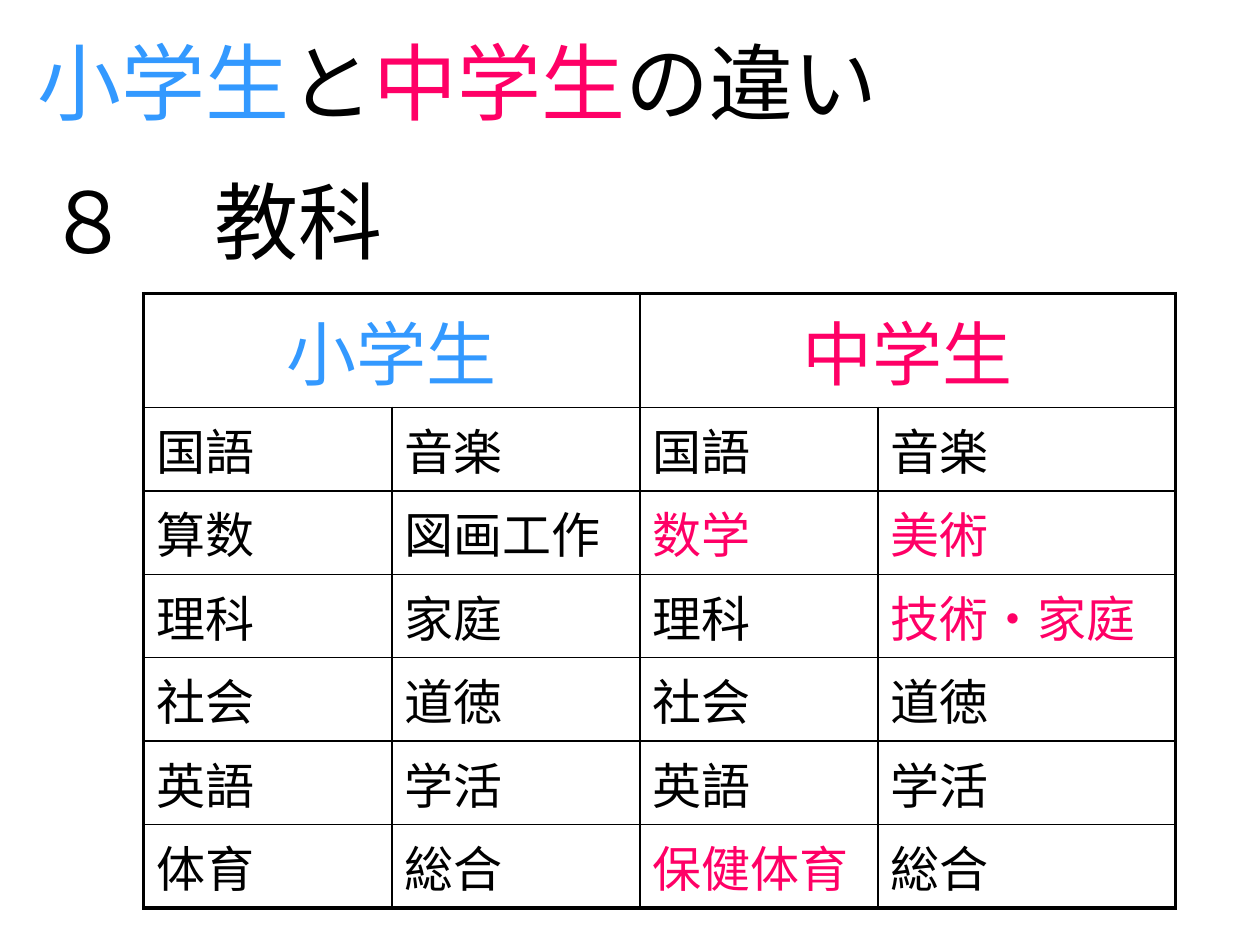
from lxml import etree
from pptx import Presentation
from pptx.dml.color import RGBColor
from pptx.enum.text import MSO_ANCHOR, MSO_AUTO_SIZE, PP_ALIGN
from pptx.oxml.ns import qn
from pptx.util import Inches, Pt

MIDDLE = MSO_ANCHOR.MIDDLE
NO_AUTOFIT = MSO_AUTO_SIZE.NONE
LEFT, CENTER = PP_ALIGN.LEFT, PP_ALIGN.CENTER

BLACK = RGBColor(0x00, 0x00, 0x00)
BLUE = RGBColor(0x33, 0x99, 0xFF)
PINK = RGBColor(0xFF, 0x00, 0x66)

FONT = "Arial"
HEADING_SIZE, HEADER_SIZE, SUBJECT_SIZE = 48, 40, 28
THIN, THICK = 1, 2.25

COLUMN_WIDTHS = [1.97, 1.97, 1.89, 2.36]
ROW_HEIGHTS = [0.79, 0.55, 0.55, 0.6, 0.55, 0.55, 0.55]
SCHOOLS = [("小学生", BLUE), ("中学生", PINK)]
SUBJECTS = [
    ["国語", "音楽", "国語", "音楽"],
    ["算数", "図画工作", "数学", "美術"],
    ["理科", "家庭", "理科", "技術・家庭"],
    ["社会", "道徳", "社会", "道徳"],
    ["英語", "学活", "英語", "学活"],
    ["体育", "総合　", "保健体育", "総合　"],
]


def add_run(paragraph, text, size, color):
    """Append one formatted run to a paragraph."""
    run = paragraph.add_run()
    run.text = text
    run.font.name = FONT
    run.font.size = Pt(size)
    run.font.color.rgb = color


def fill_heading(shape, parts):
    """Write coloured parts as one left-aligned heading line."""
    text_frame = shape.text_frame
    text_frame.word_wrap = True
    text_frame.auto_size = NO_AUTOFIT
    text_frame.vertical_anchor = MIDDLE
    paragraph = text_frame.paragraphs[0]
    paragraph.alignment = LEFT
    for text, color in parts:
        add_run(paragraph, text, HEADING_SIZE, color)


def add_border(cell, side, width):
    """Draw one black edge of a cell."""
    properties = cell._tc.get_or_add_tcPr()
    line = etree.SubElement(properties, qn(f"a:ln{side}"), w=str(Pt(width)))
    fill = etree.SubElement(line, qn("a:solidFill"))
    etree.SubElement(fill, qn("a:srgbClr"), val=str(BLACK))


def frame_cell(table, row, column):
    """Give a cell thick edges on the table's outline and thin ones inside."""
    cell = table.cell(row, column)
    outer = {
        "L": column == 0,
        "R": column + cell.span_width == len(COLUMN_WIDTHS),
        "T": row == 0,
        "B": row == len(ROW_HEIGHTS) - 1,
    }
    for side, is_outer in outer.items():
        add_border(cell, side, THICK if is_outer else THIN)
    cell.fill.background()


def fill_cell(cell, text, size, color, alignment=LEFT):
    """Write a cell's text with a fifth of a line above it."""
    paragraph = cell.text_frame.paragraphs[0]
    paragraph.alignment = alignment
    properties = paragraph._p.get_or_add_pPr()
    spacing = etree.SubElement(properties, qn("a:spcBef"))
    etree.SubElement(spacing, qn("a:spcPct"), val="20000")
    add_run(paragraph, text, size, color)


def add_subject_table(slide):
    """Add the table that compares the subjects of both schools."""
    frame = slide.shapes.add_table(
        len(ROW_HEIGHTS), len(COLUMN_WIDTHS), Inches(1.14), Inches(2.33),
        Inches(sum(COLUMN_WIDTHS)), Inches(sum(ROW_HEIGHTS)))
    table = frame.table
    table.first_row = table.horz_banding = False
    for column, width in zip(table.columns, COLUMN_WIDTHS):
        column.width = Inches(width)
    for row, height in zip(table.rows, ROW_HEIGHTS):
        row.height = Inches(height)
    for index, (school, color) in enumerate(SCHOOLS):
        header = table.cell(0, 2 * index)
        header.merge(table.cell(0, 2 * index + 1))
        fill_cell(header, school, HEADER_SIZE, color, CENTER)
    for row, subjects in enumerate(SUBJECTS, start=1):
        for column, subject in enumerate(subjects):
            changed = column >= 2 and subject != subjects[column - 2]
            fill_cell(table.cell(row, column), subject, SUBJECT_SIZE,
                      PINK if changed else BLACK)
    for row in range(len(ROW_HEIGHTS)):
        for column in range(len(COLUMN_WIDTHS)):
            frame_cell(table, row, column)


def main():
    """Build the slide and save it."""
    presentation = Presentation()
    presentation.slide_width = Inches(10)
    presentation.slide_height = Inches(7.5)
    slide = presentation.slides.add_slide(presentation.slide_layouts[5])

    title = slide.shapes.title
    title.left, title.top = Inches(0.2), Inches(0.21)
    title.width, title.height = Inches(8.5), Inches(0.87)
    fill_heading(title, [("小学生", BLUE), ("と", BLACK),
                         ("中学生", PINK), ("の違い", BLACK)])

    topic = slide.shapes.add_textbox(
        Inches(0.27), Inches(1.31), Inches(4.8), Inches(0.87))
    fill_heading(topic, [("８　教科", BLACK)])
    add_subject_table(slide)
    presentation.save("out.pptx")


if __name__ == "__main__":
    main()
